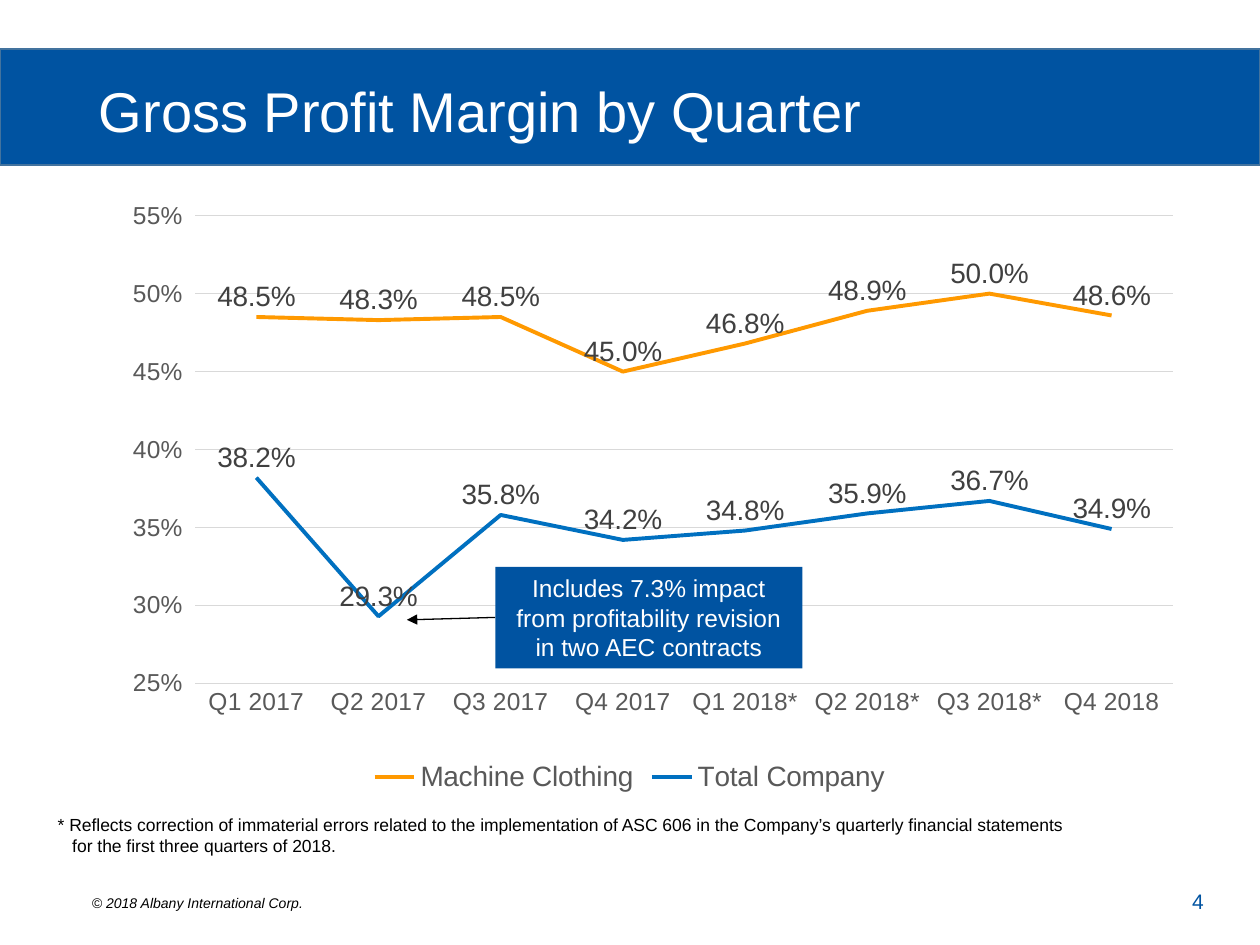
from lxml import etree
from pptx import Presentation
from pptx import util as u
from pptx.chart import data
from pptx.dml.color import RGBColor
from pptx.enum import chart as charts, shapes, text
from pptx.oxml import ns

COLORS = {
    "brand": "0053A1", "edge": "43739E", "white": "FFFFFF", "black": "000000",
    "grid": "D9D9D9", "axis": "595959", "label": "404040",
    "clothing": "FF9900", "company": "0070C0",
}
QUARTERS = ["Q1 2017", "Q2 2017", "Q3 2017", "Q4 2017",
            "Q1 2018*", "Q2 2018*", "Q3 2018*", "Q4 2018"]
MARGINS = {
    "Machine Clothing": ("clothing", [0.485, 0.483, 0.485, 0.45, 0.468, 0.489, 0.5, 0.486]),
    "Total Company": ("company", [0.382, 0.293, 0.358, 0.342, 0.348, 0.359, 0.367, 0.349]),
}
PLOT_AREA = {"x": 0.1, "y": 0.03, "w": 0.9, "h": 0.78}


class SlideBuilder:
    """Holds the style and the current slide, and draws each kind of element."""

    def __init__(self, slide, font="Arial"):
        self.slide = slide
        self.font = font

    def color(self, name):
        return RGBColor.from_string(COLORS[name])

    def style(self, font, size, color):
        font.name = self.font
        font.size = u.Pt(size)
        font.color.rgb = self.color(color)

    def stroke(self, line, color, width):
        line.color.rgb = self.color(color)
        line.width = u.Pt(width)

    def fill_frame(self, frame, wording, size, color, align="LEFT", anchor="TOP",
                   italic=False, spacing=None, hanging=0):
        frame.word_wrap = True
        frame.vertical_anchor = text.MSO_ANCHOR[anchor]
        frame.text = wording
        for paragraph in frame.paragraphs:
            paragraph.alignment = text.PP_ALIGN[align]
            paragraph.line_spacing = spacing
            if hanging:
                properties = paragraph._p.get_or_add_pPr()
                properties.set("marL", str(u.Pt(hanging)))
                properties.set("indent", str(-u.Pt(hanging)))
            for run in paragraph.runs:
                self.style(run.font, size, color)
                run.font.italic = italic

    def text(self, box, wording, size, color, **options):
        label = self.slide.shapes.add_textbox(*map(u.Pt, box))
        self.fill_frame(label.text_frame, wording, size, color, **options)

    def panel(self, box, fill, edge=None):
        panel = self.slide.shapes.add_shape(shapes.MSO_SHAPE.RECTANGLE, *map(u.Pt, box))
        panel.shadow.inherit = False
        panel.fill.solid()
        panel.fill.fore_color.rgb = self.color(fill)
        if edge:
            self.stroke(panel.line, edge, 1)
        else:
            panel.line.fill.background()
        return panel

    def arrow(self, start, end, color, width):
        arrow = self.slide.shapes.add_connector(
            shapes.MSO_CONNECTOR.STRAIGHT, *map(u.Pt, start + end))
        self.stroke(arrow.line, color, width)
        properties = arrow.element.spPr
        etree.SubElement(properties.find(ns.qn("a:ln")), ns.qn("a:tailEnd"), type="triangle")
        etree.SubElement(properties, ns.qn("a:effectLst"))

    def line_chart(self, box, categories, series_values, plot_area):
        margins = data.CategoryChartData(number_format="0.0%")
        margins.categories = categories
        for name, (_, values) in series_values.items():
            margins.add_series(name, values)
        chart = self.slide.shapes.add_chart(
            charts.XL_CHART_TYPE.LINE, *map(u.Pt, box), margins).chart
        self.style(chart.font, 10, "black")
        chart.has_title = False
        chart.has_legend = True
        chart.legend.position = charts.XL_LEGEND_POSITION.BOTTOM
        chart.legend.include_in_layout = False
        self.style(chart.legend.font, 16, "axis")
        self.axes(chart)
        plot = chart.plots[0]
        plot.vary_by_categories = False
        for series, (color, _) in zip(plot.series, series_values.values()):
            self.series(series, color)
        self.place_plot(chart, plot_area)

    def axes(self, chart):
        quarters, percent = chart.category_axis, chart.value_axis
        for axis in (quarters, percent):
            self.style(axis.tick_labels.font, 14, "axis")
            axis.minor_tick_mark = charts.XL_TICK_MARK.NONE
        quarters.major_tick_mark = charts.XL_TICK_MARK.NONE
        self.stroke(quarters.format.line, "grid", 0.75)
        percent.minimum_scale, percent.maximum_scale = 0.25, 0.55
        percent.major_unit = 0.05
        percent.tick_labels.number_format = "0%"
        percent.tick_labels.number_format_is_linked = False
        percent.format.line.fill.background()
        self.stroke(percent.major_gridlines.format.line, "grid", 0.75)

    def series(self, series, color):
        series.smooth = False
        series.marker.style = charts.XL_MARKER_STYLE.NONE
        self.stroke(series.format.line, color, 2.25)
        labels = series.data_labels
        labels.show_value = True
        labels.position = charts.XL_LABEL_POSITION.ABOVE
        labels.number_format = "0.0%"
        labels.number_format_is_linked = False
        self.style(labels.font, 16, "label")

    def place_plot(self, chart, plot_area):
        area = chart.element.find(".//" + ns.qn("c:plotArea"))
        for old in area.findall(ns.qn("c:layout")):
            area.remove(old)
        layout = etree.Element(ns.qn("c:layout"))
        manual = etree.SubElement(layout, ns.qn("c:manualLayout"))
        settings = {"layoutTarget": "inner", "xMode": "edge", "yMode": "edge", **plot_area}
        for tag, value in settings.items():
            etree.SubElement(manual, ns.qn("c:" + tag), val=str(value))
        area.insert(0, layout)


def main():
    deck = Presentation()
    deck.slide_width, deck.slide_height = u.Pt(720), u.Pt(540)
    page = SlideBuilder(deck.slides.add_slide(deck.slide_layouts[6]))

    page.panel((0, 28, 720, 66.5), "brand", "edge")
    page.text((45.4, 507.6, 653, 17.3), "© 2018 Albany International Corp.", 8, "black",
              italic=True)
    page.text((49.5, 13, 621, 104.4), "Gross Profit Margin by Quarter", 32, "white",
              anchor="MIDDLE", spacing=0.9)
    page.text((508.5, 500.5, 186.5, 28.8), "4", 12, "brand", align="RIGHT", anchor="MIDDLE")

    page.line_chart((49.5, 113, 621, 342.7), QUARTERS, MARGINS, PLOT_AREA)

    callout = page.panel((283, 324, 175.5, 58), "brand")
    page.fill_frame(callout.text_frame,
                    "Includes 7.3% impact from profitability revision in two AEC contracts",
                    14, "white", align="CENTER")
    page.arrow((283, 352.8), (232.5, 354.2), "black", 0.75)

    page.text((25.9, 461.5, 593.3, 31.7),
              "* Reflects correction of immaterial errors related to the implementation of "
              "ASC 606 in the Company’s quarterly financial statements\v"
              "for the first three quarters of 2018.",
              10, "black", hanging=8.3)
    deck.save("out.pptx")


if __name__ == "__main__":
    main()
